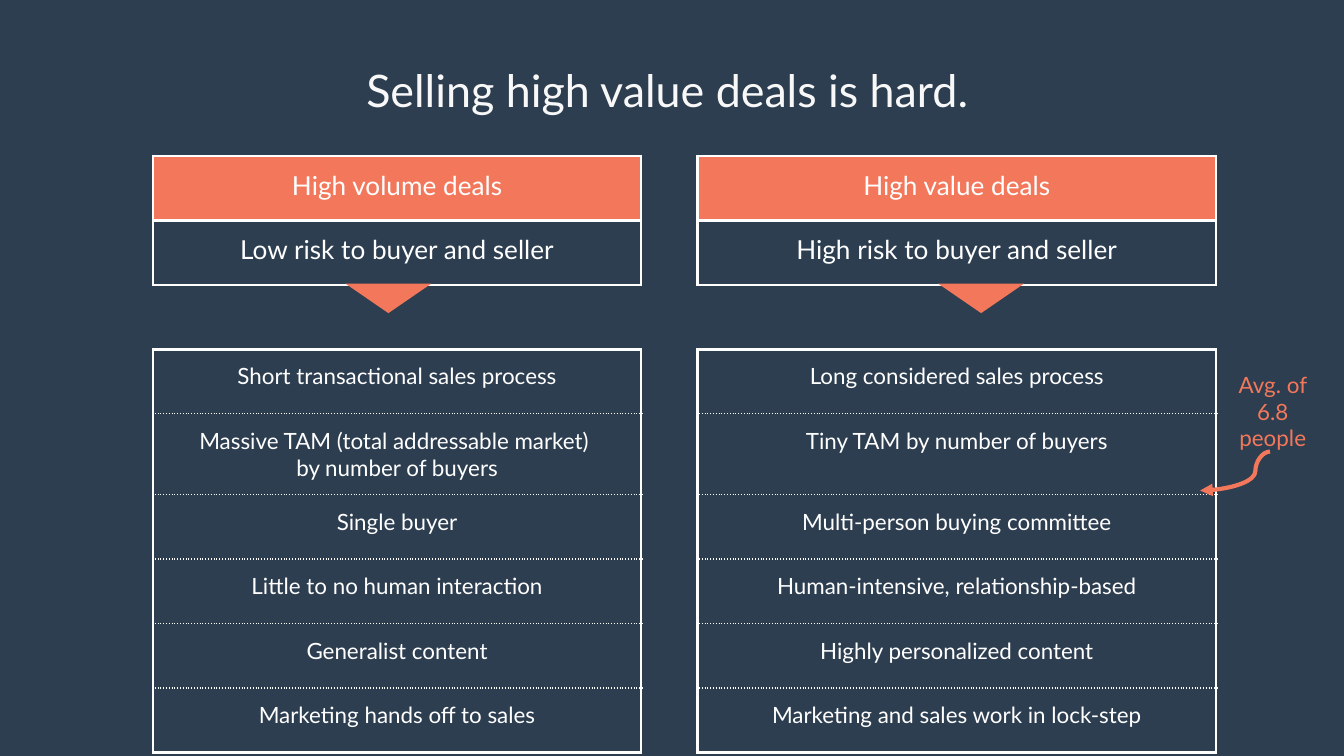
"""Build a slide comparing high volume deals with high value deals."""
import pptx
import pptx.dml.color
import pptx.enum.shapes
import pptx.enum.text
import pptx.oxml
import pptx.oxml.ns
import pptx.util
from lxml import etree

Inches = pptx.util.Inches
Pt = pptx.util.Pt
qn = pptx.oxml.ns.qn

COLORS = {"navy": "2D3E50", "coral": "F3785B", "white": "FFFFFF", "title": "F8F8F8"}
FONT = "Lato"
NO_STYLE = "{2D5ABB26-0587-4C30-8999-92F81FD0307C}"
SOLID = (1.5, "solid")
DOTTED = (0.75, "dot")

HEADINGS = [
    ("High volume deals", "High value deals"),
    ("Low risk to buyer and seller", "High risk to buyer and seller"),
]
TRAITS = [
    ("Short transactional sales process", "Long considered sales process"),
    ("Massive TAM (total addressable market) \nby number of buyers",
     "Tiny TAM by number of buyers"),
    ("Single buyer", "Multi-person buying committee"),
    ("Little to no human interaction", "Human-intensive, relationship-based"),
    ("Generalist content", "Highly personalized content"),
    ("Marketing hands off to sales", "Marketing and sales work in lock-step"),
]
COLUMN_WIDTHS = [3.63, 0.42, 3.86]
ROW_HEIGHT = 0.48
TALL_ROW_HEIGHT = 0.6


def rgb(name):
    return pptx.dml.color.RGBColor.from_string(COLORS[name])


def style_paragraph(p, size, color):
    p.alignment = pptx.enum.text.PP_ALIGN.CENTER
    p.font.name = FONT
    p.font.size = Pt(size)
    p.font.color.rgb = rgb(color)


def add_text(slide, box, text, size, color):
    tf = slide.shapes.add_textbox(*map(Inches, box)).text_frame
    tf.word_wrap = True
    tf.vertical_anchor = pptx.enum.text.MSO_ANCHOR.MIDDLE
    tf.margin_left = tf.margin_right = Inches(0.04)
    tf.margin_top = tf.margin_bottom = Inches(0.02)
    p = tf.paragraphs[0]
    p.text = text
    p.space_after = Pt(16)
    style_paragraph(p, size, color)


def add_border(cell, side, width, dash):
    ln = etree.SubElement(cell._tc.get_or_add_tcPr(), qn("a:ln" + side), w=str(Pt(width)))
    fill = etree.SubElement(ln, qn("a:solidFill"))
    etree.SubElement(fill, qn("a:srgbClr"), val=COLORS["white"])
    etree.SubElement(ln, qn("a:prstDash"), val=dash)


def fill_cell(cell, text, size, top, bottom, color=None):
    cell.margin_left = cell.margin_right = Inches(0.1)
    cell.margin_top = cell.margin_bottom = Inches(0.1)
    cell.text_frame.text = text
    for p in cell.text_frame.paragraphs:
        style_paragraph(p, size, "white")
    for side, line in (("L", SOLID), ("R", SOLID), ("T", top), ("B", bottom)):
        add_border(cell, side, *line)
    if color:
        cell.fill.solid()
        cell.fill.fore_color.rgb = rgb(color)
    else:
        cell.fill.background()


def add_comparison(slide):
    rows = HEADINGS + [None] + TRAITS
    heights = [TALL_ROW_HEIGHT if row and "\n" in row[0] else ROW_HEIGHT for row in rows]
    table = slide.shapes.add_table(
        len(rows), len(COLUMN_WIDTHS), Inches(1.14), Inches(1.16),
        Inches(sum(COLUMN_WIDTHS)), Inches(sum(heights))).table
    table.first_row = table.horz_banding = False
    table._tbl.tblPr.find(qn("a:tableStyleId")).text = NO_STYLE
    for column, width in zip(table.columns, COLUMN_WIDTHS):
        column.width = Inches(width)
    for row, height in zip(table.rows, heights):
        row.height = Inches(height)
    for i, pair in enumerate(HEADINGS):
        for col, text in zip((0, 2), pair):
            fill_cell(table.cell(i, col), text, 14, SOLID, SOLID, None if i else "coral")
    last = len(TRAITS) - 1
    for i, pair in enumerate(TRAITS):
        for col, text in zip((0, 2), pair):
            fill_cell(table.cell(i + len(HEADINGS) + 1, col), text, 12,
                      DOTTED if i else SOLID, SOLID if i == last else DOTTED)


def add_pointer(slide, left):
    sp = slide.shapes.add_shape(
        pptx.enum.shapes.MSO_SHAPE.ISOSCELES_TRIANGLE,
        Inches(left), Inches(2.11), Inches(0.64), Inches(0.22))
    sp.rotation = 180
    sp.shadow.inherit = False
    sp.fill.solid()
    sp.fill.fore_color.rgb = rgb("coral")
    sp.line.fill.background()


def add_curved_arrow(slide, start, end, bend):
    arrow = slide.shapes.add_connector(
        pptx.enum.shapes.MSO_CONNECTOR.CURVE, *map(Inches, start + end))
    arrow.line.color.rgb = rgb("coral")
    arrow.line.width = Pt(2.25)
    sp_pr = arrow._element.spPr
    guides = sp_pr.find(qn("a:prstGeom")).get_or_add_avLst()
    etree.SubElement(guides, qn("a:gd"), name="adj1", fmla=f"val {round(bend * 100000)}")
    etree.SubElement(arrow.line._get_or_add_ln(), qn("a:tailEnd"), type="triangle")
    etree.SubElement(sp_pr, qn("a:effectLst"))


def main():
    prs = pptx.Presentation()
    prs.slide_width, prs.slide_height = Inches(10), Inches(5.625)
    slide = prs.slides.add_slide(prs.slide_layouts[6])
    slide.background.fill.solid()
    slide.background.fill.fore_color.rgb = rgb("navy")
    add_text(slide, (0.56, 0.29, 8.81, 0.75), "Selling high value deals is hard.", 24, "title")
    add_comparison(slide)
    for left in (2.57, 6.98):
        add_pointer(slide, left)
    add_curved_arrow(slide, (9.45, 3.36), (8.93, 3.65), 0.21)
    add_text(slide, (9.13, 2.78, 0.68, 0.56), "Avg. of 6.8 people", 12, "coral")
    prs.save("out.pptx")


if __name__ == "__main__":
    main()
